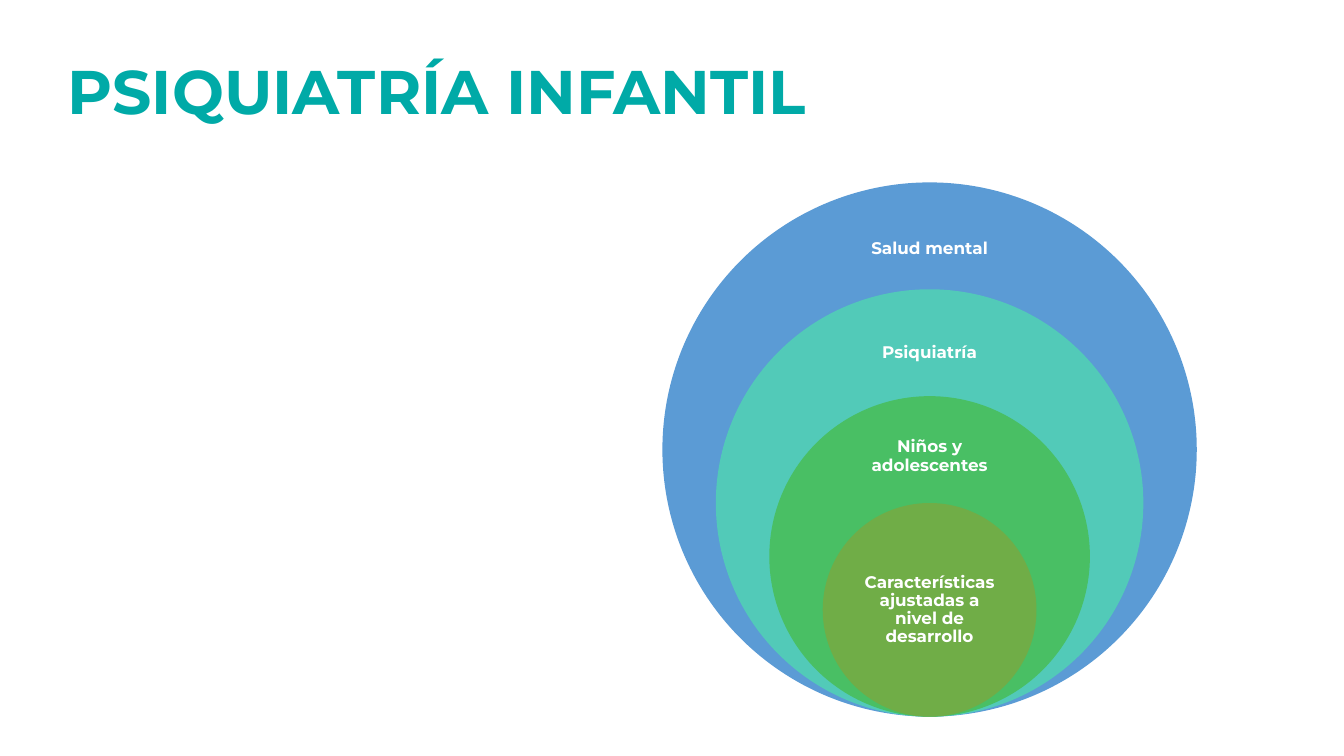
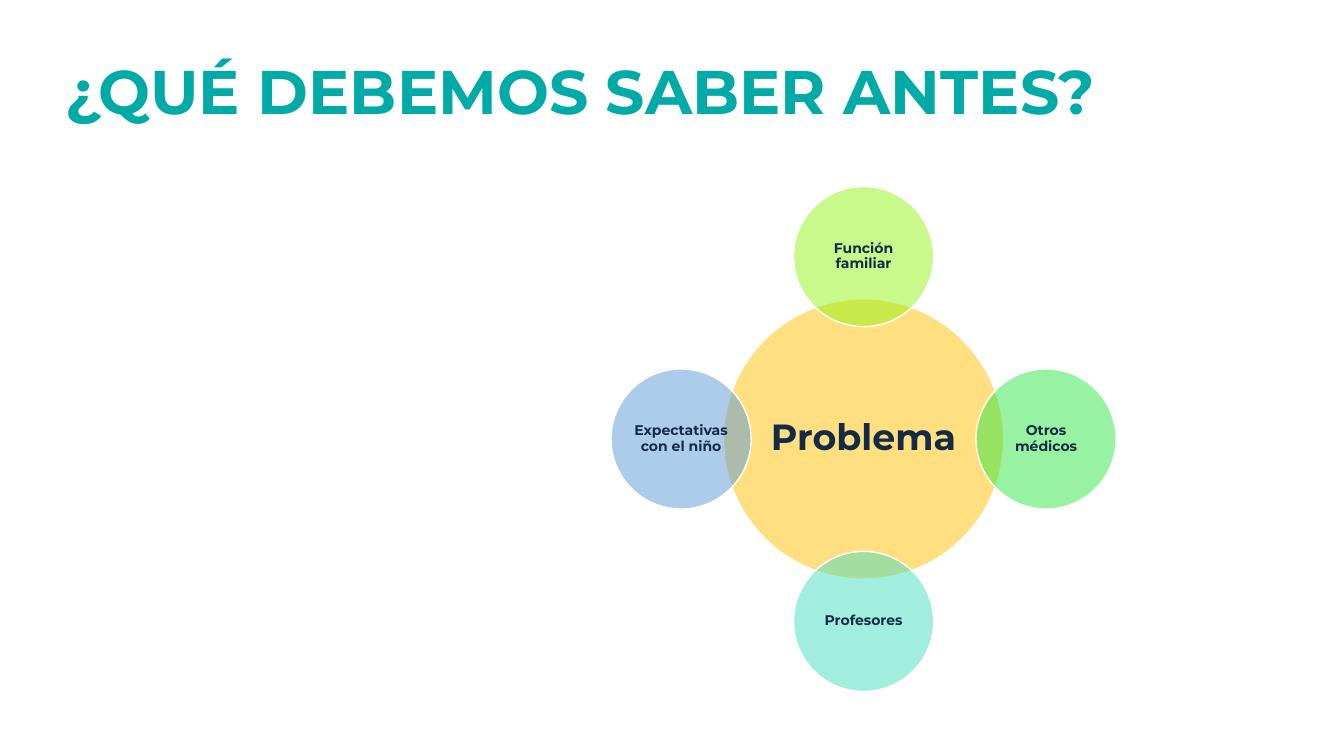
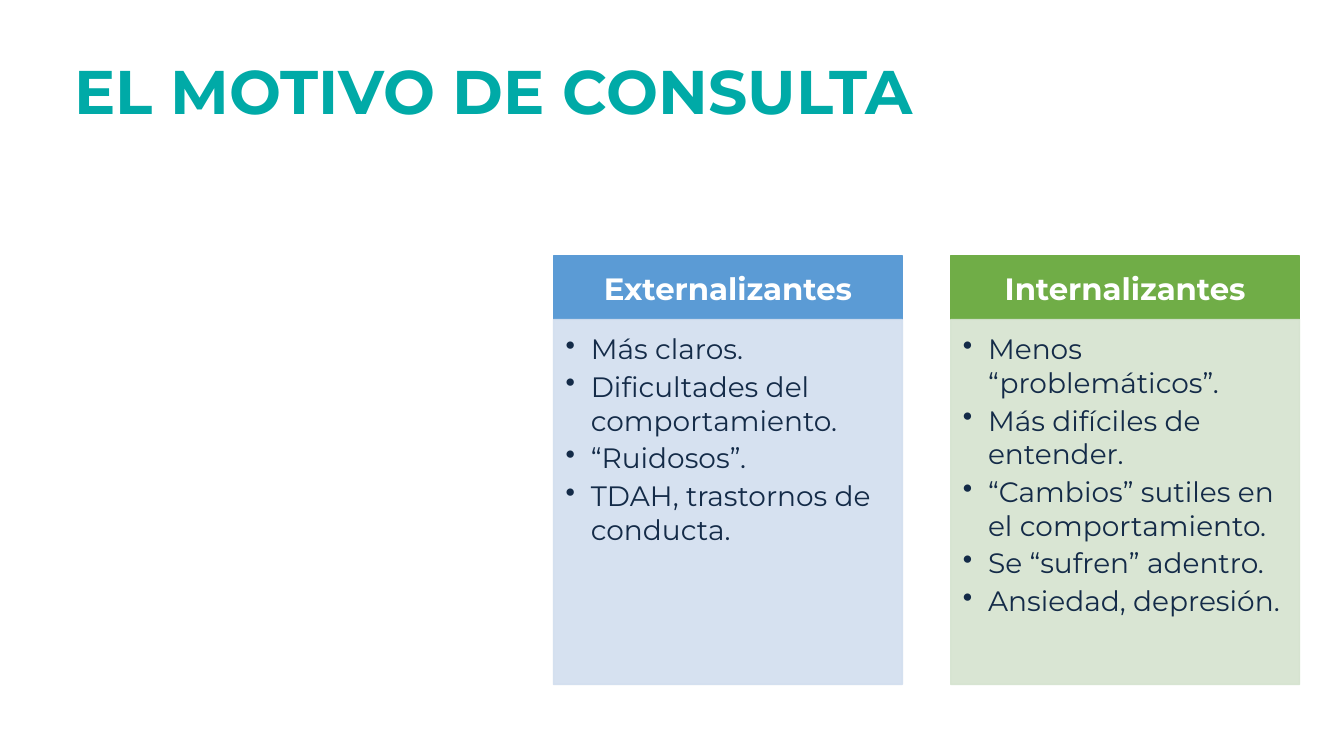
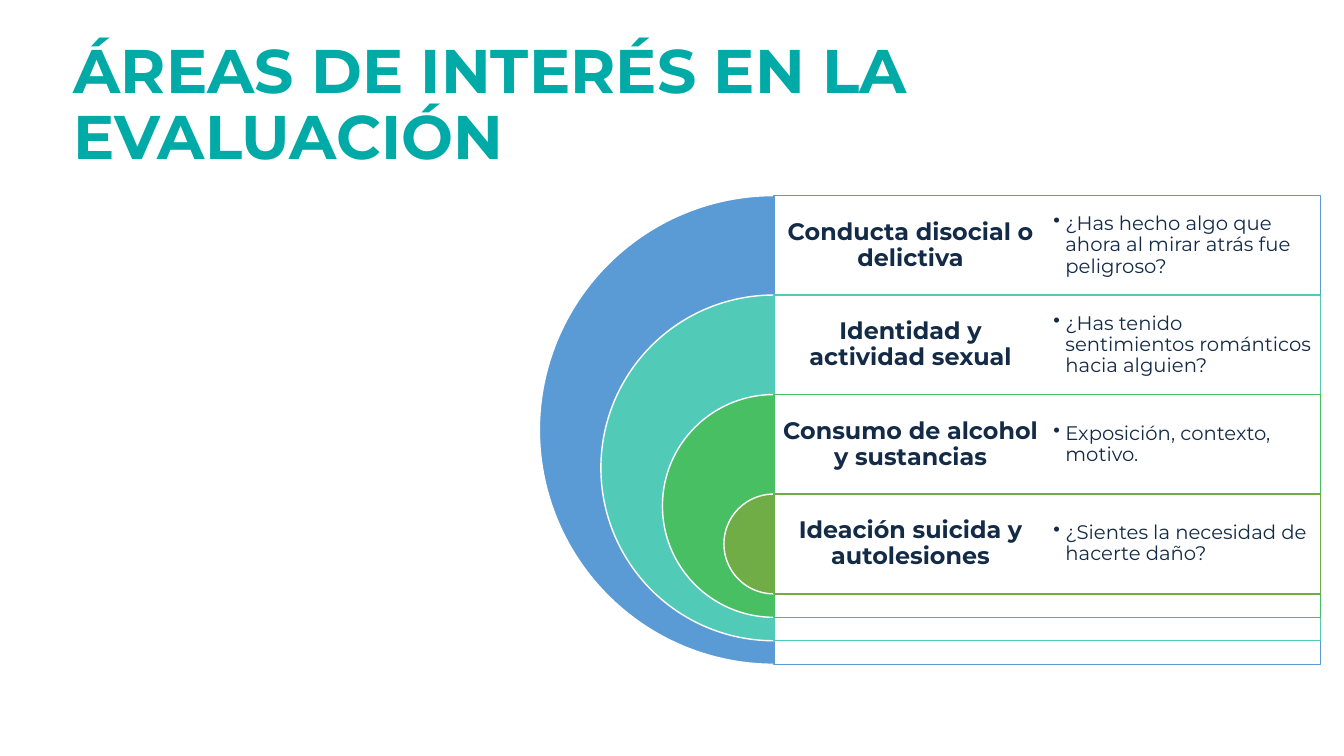
import math
from dataclasses import dataclass

import pptx
import pptx.util
import pptx.dml.color
import pptx.enum.shapes
import pptx.enum.text
import pptx.oxml.ns
from lxml import etree

SHAPE = pptx.enum.shapes.MSO_SHAPE
ALIGN = pptx.enum.text.PP_ALIGN
ANCHOR = pptx.enum.text.MSO_ANCHOR
qn = pptx.oxml.ns.qn


@dataclass(frozen=True)
class Theme:
    font: str = "Montserrat"
    title: str = "00AAA7"
    ink: str = "142B48"
    white: str = "FFFFFF"
    blue: str = "5B9BD5"
    olive: str = "70AD47"
    pale_blue: str = "D2DEEF"
    pale_green: str = "D5E3CF"
    amber: str = "FFC000"
    levels: tuple = ("5B9BD5", "52CAB8", "49BF64", "70AD47")
    satellites: tuple = ("94F319", "30E845", "46DEBF", "5B9BD5")
    title_size: int = 44
    core_size: int = 26
    head_size: int = 22
    list_size: int = 20
    level_size: int = 17
    detail_size: int = 14
    ring_size: int = 12
    small_size: int = 10


T = Theme()


# Shared helpers: 100 px to the inch
def px(n):
    return pptx.util.Emu(round(n * 9144))


def rgb(value):
    return pptx.dml.color.RGBColor.from_string(value)


def set_alpha(fill_parent, percent):
    color = fill_parent.find(qn("a:solidFill"))[0]
    etree.SubElement(color, qn("a:alpha")).set("val", str(percent * 1000))


def add_shape(s, kind, box, fill, line=None, alpha=None, line_alpha=None):
    sp = s.shapes.add_shape(kind, *map(px, box))
    sp.shadow.inherit = False
    sp.fill.solid()
    sp.fill.fore_color.rgb = rgb(fill)
    if alpha:
        set_alpha(sp.fill._xPr, alpha)
    if line:
        sp.line.color.rgb = rgb(line)
        sp.line.width = pptx.util.Pt(1)
        if line_alpha:
            set_alpha(sp.line._ln, line_alpha)
    else:
        sp.line.fill.background()
    return sp


def add_text(s, box, lines, **style):
    sp = s.shapes.add_textbox(*map(px, box))
    write(sp, lines, **style)


def write(sp, lines, size, color=T.ink, bold=False, align=ALIGN.CENTER,
          anchor=ANCHOR.MIDDLE, insets=(0, 0, 0, 0), spacing=0.9,
          bullet_indent=None, after=0):
    """Fill a shape with formatted paragraphs; bullets if an indent is given."""
    tf = sp.text_frame
    tf.word_wrap = True
    tf.auto_size = pptx.enum.text.MSO_AUTO_SIZE.NONE
    tf.vertical_anchor = anchor
    tf.margin_left, tf.margin_top, tf.margin_right, tf.margin_bottom = map(px, insets)
    tf.text = "\n".join(lines)
    for p in tf.paragraphs:
        if bullet_indent:
            pPr = p._p.get_or_add_pPr()
            pPr.set("marL", str(px(bullet_indent)))
            pPr.set("indent", str(-px(bullet_indent)))
            etree.SubElement(pPr, qn("a:buChar")).set("char", "•")
        p.alignment = align
        p.line_spacing = spacing
        p.space_after = pptx.util.Pt(after)
        for r in p.runs:
            r.font.name = T.font
            r.font.size = pptx.util.Pt(size)
            r.font.bold = bold
            r.font.color.rgb = rgb(color)


def new_slide(prs, title, x, y=21):
    s = prs.slides.add_slide(prs.slide_layouts[5])
    sp = s.shapes.title
    sp.left, sp.top, sp.width, sp.height = map(px, (x, y, 1150, 145))
    write(sp, [title], T.title_size, T.title, bold=True, align=ALIGN.LEFT,
          insets=(10, 5, 10, 5))
    return s


def add_nested_circles(s, box, labels):
    """Circles that share their lowest point, each labelled in its visible ring."""
    x, y, size = box
    step = size // (len(labels) + 1)
    label_w, label_h = 148, 76
    style = dict(size=T.ring_size, color=T.white, bold=True, insets=(9, 9, 9, 9))
    for i, (label, fill) in enumerate(zip(labels, T.levels)):
        d = size - i * step
        top = y + i * step
        circle = add_shape(s, SHAPE.OVAL, (x + i * step / 2, top, d, d), fill)
        if i == len(labels) - 1:
            write(circle, [label], **style)
        else:
            middle = top + 66 - 3 * i
            add_text(s, (x + (size - label_w) / 2, middle - label_h / 2,
                         label_w, label_h), [label], **style)


def add_radial(s, box, core, labels):
    """A central circle with satellites placed clockwise from the top."""
    x, y, size = box
    cx, cy = x + size / 2, y + size / 2
    core_d, satellite_d = 278, 139
    orbit = (size - satellite_d) / 2

    def circle(mx, my, d, fill, label, text_size, inset):
        sp = add_shape(s, SHAPE.OVAL, (mx - d / 2, my - d / 2, d, d), fill,
                       line=T.white, alpha=50)
        write(sp, [label], text_size, bold=True, insets=(inset,) * 4)

    circle(cx, cy, core_d, T.amber, core, T.core_size, 4)
    for i, (label, fill) in enumerate(zip(labels, T.satellites)):
        angle = 2 * math.pi * i / len(labels)
        circle(cx + orbit * math.sin(angle), cy - orbit * math.cos(angle),
               satellite_d, fill, label, T.small_size, 1)


def add_columns(s, box, columns):
    """Headed lists side by side."""
    x, y, w, h = box
    gap, head_h = 48, 63
    col_w = (w - gap * (len(columns) - 1)) / len(columns)
    for i, (head, strong, pale, items) in enumerate(columns):
        left = x + i * (col_w + gap)
        sp = add_shape(s, SHAPE.RECTANGLE, (left, y, col_w, head_h), strong, line=strong)
        write(sp, [head], T.head_size, T.white, bold=True,
              insets=(17, 10, 17, 10), spacing=1.0)
        sp = add_shape(s, SHAPE.RECTANGLE, (left, y + head_h, col_w, h - head_h), pale,
                       line=pale, alpha=90, line_alpha=90)
        write(sp, items, T.list_size, align=ALIGN.LEFT, anchor=ANCHOR.TOP,
              insets=(12, 12, 16, 17), spacing=1.0, bullet_indent=25, after=3)


def add_target_list(s, box, rows):
    """Half circles on the left, each opening into a framed row on the right."""
    x, y, w, h = box
    axis = x + h / 2
    frame_w = x + w - axis
    row_h, shrink = 99, 122
    pitch = (h - row_h + 23 * (len(rows) - 1)) / len(rows)
    pitch = 98.7
    for i, ((label, detail), color) in enumerate(zip(rows, T.levels)):
        d = h - i * shrink
        top = y + i * pitch
        pie = add_shape(s, SHAPE.PIE, (axis - d / 2, top, d, d), color, line=T.white)
        pie.adjustments[0], pie.adjustments[1] = 54, 162
        add_shape(s, SHAPE.RECTANGLE, (axis, top, frame_w, d), T.white,
                  line=color, alpha=90)
        add_text(s, (axis, top, frame_w / 2, row_h), [label], size=T.level_size,
                 bold=True, insets=(7, 7, 7, 7))
        add_text(s, (axis + frame_w / 2, top, frame_w / 2, row_h), [detail],
                 size=T.detail_size, align=ALIGN.LEFT, insets=(6, 6, 6, 6),
                 bullet_indent=12)


def main():
    prs = pptx.Presentation()
    prs.slide_width, prs.slide_height = px(1333), px(750)

    # Nested fields
    s = new_slide(prs, "PSIQUIATRÍA INFANTIL", 57)
    add_nested_circles(s, (657, 181, 530), [
        "Salud mental", "Psiquiatría", "Niños y adolescentes",
        "Características ajustadas a nivel de desarrollo"])

    # Problem and its surroundings
    s = new_slide(prs, "¿QUÉ DEBEMOS SABER ANTES?", 55)
    add_radial(s, (606, 185, 501), "Problema", [
        "Función familiar", "Otros médicos", "Profesores", "Expectativas con el niño"])

    # Two kinds of complaint
    s = new_slide(prs, "EL MOTIVO DE CONSULTA", 64)
    add_columns(s, (549, 254, 740, 425), [
        ("Externalizantes", T.blue, T.pale_blue, [
            "Más claros.", "Dificultades del comportamiento.", "“Ruidosos”.",
            "TDAH, trastornos de conducta."]),
        ("Internalizantes", T.olive, T.pale_green, [
            "Menos “problemáticos”.", "Más difíciles de entender.",
            "“Cambios” sutiles en el comportamiento.", "Se “sufren” adentro.",
            "Ansiedad, depresión."])])

    # Areas with sample questions
    s = new_slide(prs, "ÁREAS DE INTERÉS EN LA EVALUACIÓN", 63, 33)
    add_target_list(s, (535, 194, 775, 465), [
        ("Conducta disocial o delictiva",
         "¿Has hecho algo que ahora al mirar atrás fue peligroso?"),
        ("Identidad y actividad sexual",
         "¿Has tenido sentimientos románticos hacia alguien?"),
        ("Consumo de alcohol y sustancias", "Exposición, contexto, motivo."),
        ("Ideación suicida y autolesiones", "¿Sientes la necesidad de hacerte daño?")])

    prs.save("out.pptx")


if __name__ == "__main__":
    main()
